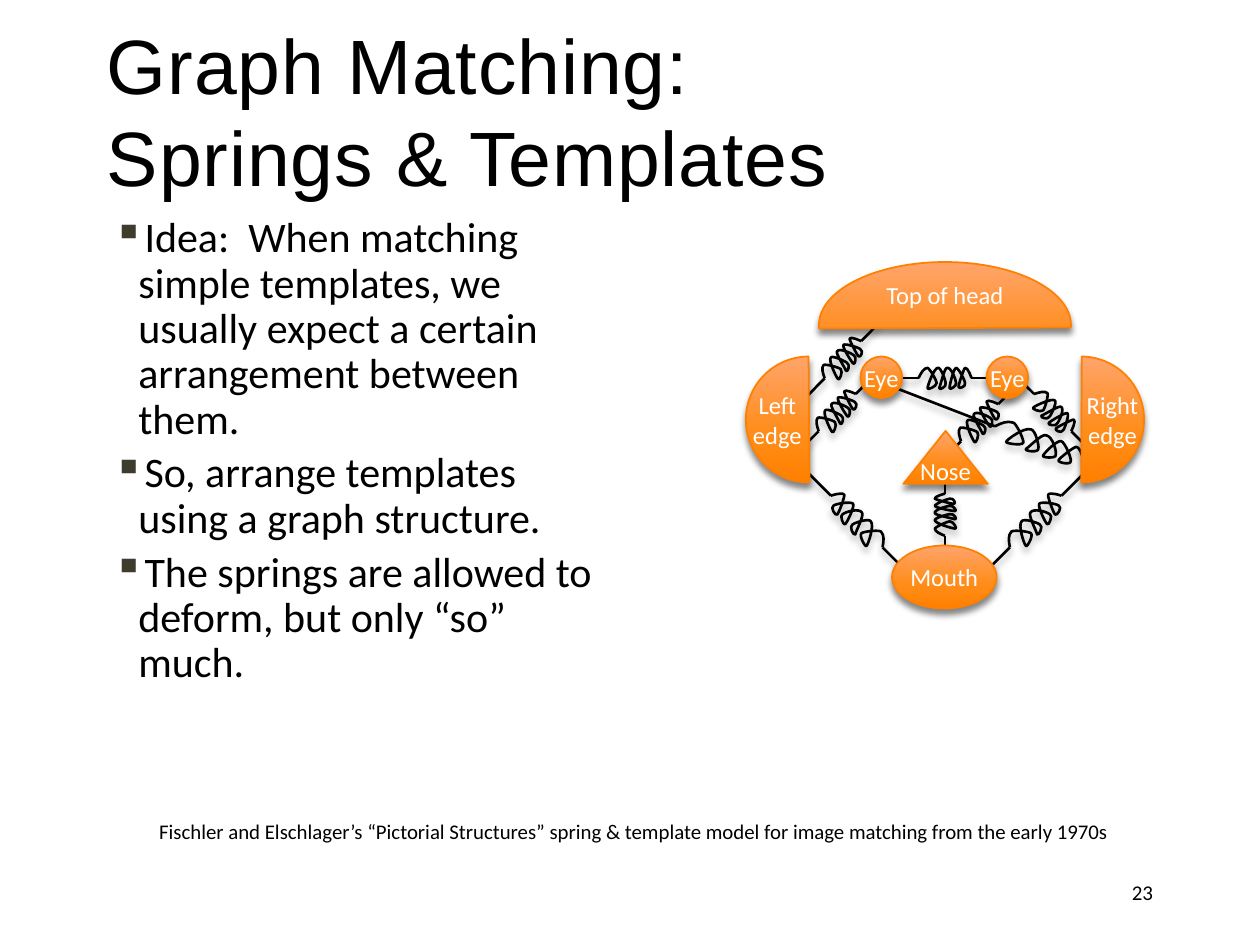
from copy import deepcopy
from math import hypot

from lxml.etree import SubElement
from pptx import Presentation
from pptx.dml.color import RGBColor
from pptx.enum.shapes import MSO_CONNECTOR, MSO_SHAPE as SHAPE
from pptx.enum.text import MSO_ANCHOR as ANCHOR, PP_ALIGN as ALIGN
from pptx.oxml.ns import qn
from pptx.util import Inches, Pt

color = RGBColor.from_string


def write(shape, lines, size, hex_color="000000", align=ALIGN.LEFT, anchor=ANCHOR.TOP,
          font="Calibri", wrap=True):
    frame = shape.text_frame
    frame.word_wrap = wrap
    frame.vertical_anchor = anchor
    for index, line in enumerate(lines):
        paragraph = frame.add_paragraph() if index else frame.paragraphs[0]
        paragraph.text = line
        paragraph.alignment = align
        paragraph.font.size = Pt(size)
        paragraph.font.name = font
        paragraph.font.color.rgb = color(hex_color)
    return frame


def outline(shape, hex_color, width, blur, opacity):
    shape.line.color.rgb = color(hex_color)
    shape.line.width = Pt(width)
    effects = SubElement(shape.element.spPr, qn("a:effectLst"))
    shadow = SubElement(effects, qn("a:outerShdw"), blurRad=str(Pt(blur)), dist=str(Pt(3)),
                        dir="5400000", rotWithShape="0")
    black = SubElement(shadow, qn("a:srgbClr"), val="000000")
    SubElement(black, qn("a:alpha"), val=str(opacity * 1000))


presentation = Presentation()
presentation.slide_width, presentation.slide_height = Inches(10), Inches(7.5)
slide = presentation.slides.add_slide(presentation.slide_layouts[6])
shapes = slide.shapes

body = shapes.add_textbox(Inches(0.75), Inches(1.67), Inches(4.17), Inches(5))
ideas = [
    "Idea:  When matching simple templates, we usually expect a certain arrangement between them.",
    "So, arrange templates using a graph structure.",
    "The springs are allowed to deform, but only “so” much.",
]
body.text_frame.word_wrap = True
body.text_frame.text = "\n".join(ideas)
for index, paragraph in enumerate(body.text_frame.paragraphs):
    properties = paragraph._p.get_or_add_pPr()
    properties.set("marL", str(Inches(0.25)))
    properties.set("indent", str(Inches(-0.2)))
    bullet_color = SubElement(properties, qn("a:buClr"))
    SubElement(bullet_color, qn("a:srgbClr"), val="3E3D2D")
    SubElement(properties, qn("a:buChar"), char="▪")
    paragraph.line_spacing = 0.9
    paragraph.space_before = Pt(4.8 if index else 0)
    paragraph.font.size = Pt(24)
    paragraph.font.name = "Calibri"
    paragraph.font.color.rgb = color("000000")

number = shapes.add_textbox(Inches(7.17), Inches(6.83), Inches(2.08), Inches(0.5))
write(number, ["23"], 12, align=ALIGN.RIGHT, anchor=ANCHOR.MIDDLE)

title = shapes.add_textbox(Inches(0.75), Inches(0.25), Inches(8.5), Inches(1.24))
write(title, ["Graph Matching:\vSprings & Templates"], 44, anchor=ANCHOR.MIDDLE, font="Arial")
title.element.xpath(".//a:defRPr")[0].set("spc", "50")

coil_length = 41
coil_points = [
    (0, 0),
    (2, 4), (4, 8), (7, 8), (9, 7), (14, -2), (14, -4), (14, -7), (6, -10), (7, -8),
    (7, -6), (12, 8), (15, 8), (17, 9), (21, -2), (21, -4), (22, -7), (16, -10), (16, -8),
    (17, -6), (20, 8), (22, 8), (25, 9), (29, -1), (29, -4), (30, -6), (24, -10), (24, -8),
    (24, -6), (27, 7), (29, 8), (31, 8), (36, -2), (36, -4), (37, -7), (31, -9), (31, -7),
    (31, -5), (35, 7), (36, 8), (38, 9), (41, 0), (41, 0),
]
springs = [
    (7.21, 4.55, 6.39, 3.73, 0.25, 0.75, -1),
    (7.81, 4.55, 8.63, 3.73, 0.25, 0.75, 1),
    (6.4, 3.15, 6.98, 2.56, 0.25, 0.75, 1),
    (7.11, 3.08, 8.82, 3.74, 0.46, 0.87, 1),
    (7.48, 3.65, 8.07, 3.06, 0.25, 0.75, 1),
    (7.08, 3, 7.92, 3, 0.25, 0.75, 1),
    (6.35, 3.57, 6.94, 2.98, 0.25, 0.75, 1),
    (8.06, 2.98, 8.65, 3.57, 0.25, 0.75, 1),
    (7.5, 4.42, 7.5, 3.75, 0.25, 0.75, 1),
]
for x1, y1, x2, y2, coil_start, coil_end, side in springs:
    dx, dy = x2 - x1, y2 - y1
    length = hypot(dx, dy)
    for first, last in ((0, coil_start), (coil_end, 1)):
        ends = [Inches(value) for value in (x1 + first * dx, y1 + first * dy,
                                            x1 + last * dx, y1 + last * dy)]
        line = shapes.add_connector(MSO_CONNECTOR.STRAIGHT, *ends)
        outline(line, "000000", 1.5, 4, 28)
    points = []
    for x, y in coil_points:
        along = coil_start + (coil_end - coil_start) * x / coil_length
        across = side * y / 100 / length
        points.append((Inches(x1 + along * dx + across * dy),
                       Inches(y1 + along * dy - across * dx)))
    builder = shapes.build_freeform(*points[0])
    builder.add_line_segments(points[1:], close=False)
    coil = builder.convert_to_shape()
    coil_path = coil.element.xpath(".//a:path")[0]
    segments = coil_path.findall(qn("a:lnTo"))
    for index in range(0, len(segments), 3):
        curve = SubElement(coil_path, qn("a:cubicBezTo"))
        for segment in segments[index:index + 3]:
            curve.append(segment[0])
            coil_path.remove(segment)
    coil.fill.background()
    outline(coil, "000000", 1.5, 4, 28)

gradient = [(0, "FFA46B"), (0.6, "FF8D1A"), (1, "FF8000")]
middle, top = ANCHOR.MIDDLE, ANCHOR.TOP
parts = [
    (["Eye"], SHAPE.OVAL, 6.83, 2.83, 0.33, 0.33, [], 0, 0, middle),
    (["Eye"], SHAPE.OVAL, 7.83, 2.83, 0.33, 0.33, [], 0, 0, middle),
    (["Nose"], SHAPE.ISOSCELES_TRIANGLE, 7.17, 3.42, 0.67, 0.42, [], 0, 0, middle),
    (["Left", "edge"], SHAPE.CHORD, 5.92, 2.83, 1, 1, [53.66, 161.83], 0, 0.5, middle),
    (["Right", "edge"], SHAPE.CHORD, 8.08, 2.83, 1, 1, [54.14, 161.55], 0.5, 0, middle),
    (["Top of head"], SHAPE.CHORD, 6.5, 2.08, 2, 1, [107.02, 0.68], 0, 0, top),
    (["Mouth"], SHAPE.OVAL, 7.08, 4.33, 0.83, 0.5, [], 0, 0, middle),
]
for lines, kind, left, y, width, height, angles, inset_left, inset_right, anchor in parts:
    part = shapes.add_shape(kind, Inches(left), Inches(y), Inches(width), Inches(height))
    for index, angle in enumerate(angles):
        part.adjustments[index] = angle
    if inset_left:
        part.element.spPr.xfrm.set("flipH", "1")
    part.fill.gradient()
    part.fill.gradient_angle = 270
    stop_list = part.element.xpath(".//a:gsLst")[0]
    stop_list.insert(1, deepcopy(stop_list[0]))
    for stop, (position, hex_color) in zip(part.fill.gradient_stops, gradient):
        stop.position = position
        stop.color.rgb = color(hex_color)
    outline(part, "FF8000", 1, 3.8, 48)
    frame = write(part, lines, 14, "FFFFFF", ALIGN.CENTER, anchor, wrap=False)
    frame.margin_left, frame.margin_right = Inches(inset_left), Inches(inset_right)
    frame.margin_top = frame.margin_bottom = 0

caption = shapes.add_textbox(Inches(0.75), Inches(6.45), Inches(8.5), Inches(0.4))
write(caption, ["Fischler and Elschlager’s “Pictorial Structures” spring & template model "
                "for image matching from the early 1970s"], 11.9, align=ALIGN.CENTER)
caption.text_frame.paragraphs[0]._p.get_or_add_pPr().set("marL", str(Inches(0.05)))

presentation.save("out.pptx")
